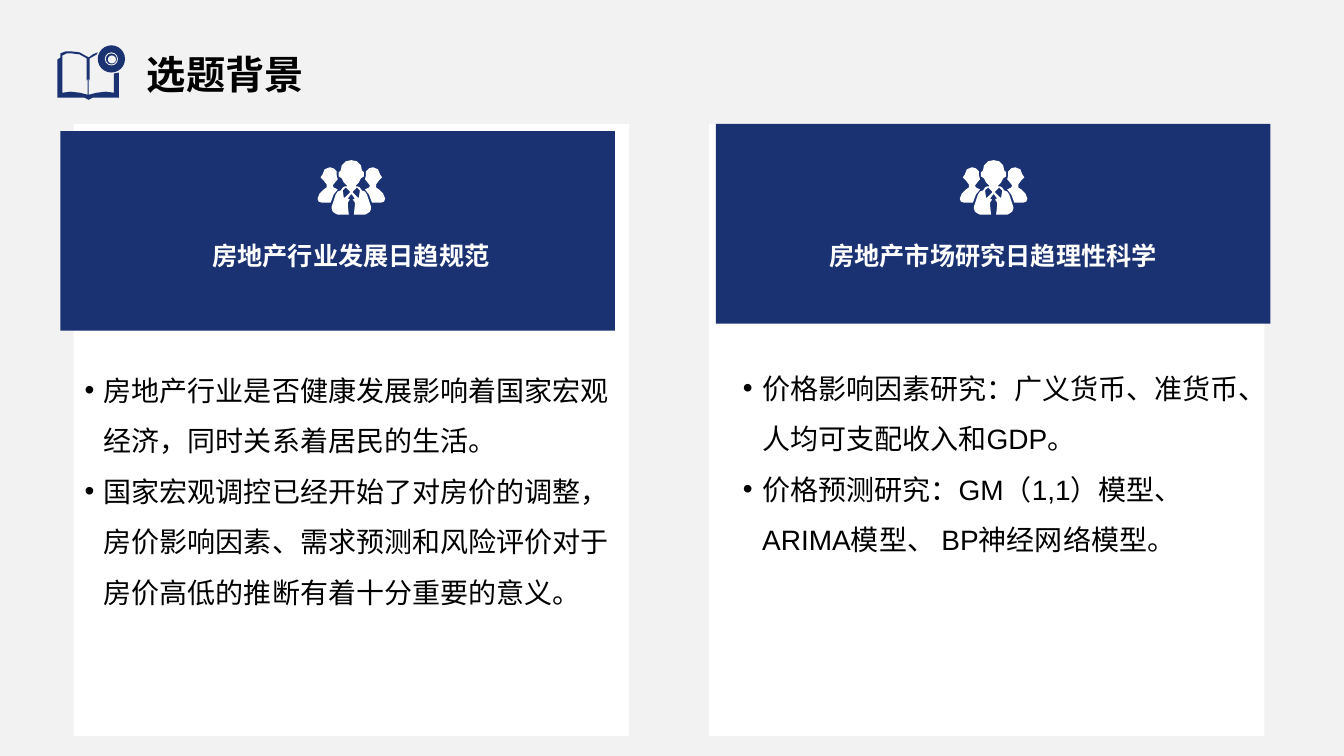
"""Build the research background slide with two topic cards."""
import lxml.etree
import pptx
import pptx.dml.color
import pptx.enum.shapes
import pptx.enum.text
import pptx.oxml.ns
import pptx.util

Inches = pptx.util.Inches
NAVY, WHITE, BLACK, GREY = "1A3172", "FFFFFF", "000000", "F2F2F2"
UNIT = Inches(0.01)
SHAPES = pptx.enum.shapes.MSO_SHAPE
ANCHOR = pptx.enum.text.MSO_ANCHOR


def paint(shape, color):
    shape.shadow.inherit = False
    shape.fill.solid()
    shape.fill.fore_color.rgb = pptx.dml.color.RGBColor.from_string(color)
    shape.line.fill.background()


def add_text(place, lines, size, color, bold=False, anchor=ANCHOR.TOP):
    box = slide.shapes.add_textbox(*[Inches(value) for value in place])
    frame = box.text_frame
    frame.text = "\n".join(lines)
    frame.word_wrap = True
    frame.vertical_anchor = anchor
    for para in frame.paragraphs:
        font = para.runs[0].font
        font.name, font.size, font.bold = "Arial", pptx.util.Pt(size), bold
        font.color.rgb = pptx.dml.color.RGBColor.from_string(color)
    return frame


deck = pptx.Presentation()
deck.slide_width, deck.slide_height = Inches(13.33), Inches(7.5)
slide = deck.slides.add_slide(deck.slide_layouts[6])
slide.background.fill.solid()
slide.background.fill.fore_color.rgb = pptx.dml.color.RGBColor.from_string(GREY)

book = [
    [(14, 6), (22, 7), (31, 12), (35, 9), (40, 7), (39, 9), (32, 13), (32, 35),
     (31, 33), (31, 49), (39, 47), (48, 46), (56, 47), (56, 28), (61, 27), (61, 52),
     (35, 52), (31, 54), (27, 52), (0, 52), (0, 14), (3, 12), (3, 8), (8, 6)],
    [(14, 8), (9, 8), (5, 10), (5, 47), (13, 46), (22, 47), (30, 49), (30, 33),
     (29, 35), (29, 13), (22, 9)],
]
colleague = [
    (55, 7), (60, 9), (62, 14), (64, 17), (61, 20), (58, 24), (58, 27), (61, 29),
    (65, 33), (67, 38), (66, 41), (63, 42), (54, 42), (51, 34), (47, 29), (51, 27),
    (52, 25), (48, 20), (47, 19), (48, 15), (48, 11), (51, 8)]
collar = [(39, 27), (35, 31), (35, 32), (40, 37), (41, 37), (42, 30), (41, 29)]
leader_half = [
    (34, 0), (39, 1), (43, 5), (44, 10), (46, 12), (46, 16), (43, 18), (41, 22),
    (38, 25), (38, 26), (40, 26), (42, 27), (44, 30), (47, 31), (49, 34), (53, 46),
    (53, 48), (52, 51), (49, 53), (47, 54), (36, 54), (37, 45), (37, 42), (35, 39),
    (37, 38), (34, 34)]
colleague_left, collar_left, leader_left = [
    [(67 - x, y) for x, y in outline] for outline in (colleague, collar, leader_half)]
people = [leader_half + leader_left[::-1], colleague, colleague_left, collar, collar_left]

cards = [
    (0.73, 0.6, 1.3, 1.48, 3.15, "房地产行业发展日趋规范", (0.74, 3.49, 5.49, 2.6),
     ["房地产行业是否健康发展影响着国家宏观经济，同时关系着居民的生活。",
      "国家宏观调控已经开始了对房价的调整，房价影响因素、需求预测和风险评价对于房价高低的推断有着十分重要的意义。"]),
    (7.03, 7.1, 1.23, 7.85, 9.52, "房地产市场研究日趋理性科学", (7.27, 3.47, 5.15, 2.06),
     ["价格影响因素研究：广义货币、准货币、人均可支配收入和GDP。",
      "价格预测研究：GM（1,1）模型、ARIMA模型、 BP神经网络模型。"]),
]
icons = [(0.57, 0.45, book, NAVY)]
for card_left, banner_left, banner_top, heading_left, icon_left, heading, body_place, points in cards:
    for left, top, width, height, color in [
            (card_left, 1.23, 5.51, 6.07, WHITE), (banner_left, banner_top, 5.5, 1.98, NAVY)]:
        panel = slide.shapes.add_shape(
            SHAPES.RECTANGLE, Inches(left), Inches(top), Inches(width), Inches(height))
        paint(panel, color)
    title = add_text((heading_left, 2.21, 4, 0.64), [heading], 18, WHITE, True, ANCHOR.MIDDLE)
    title.paragraphs[0].alignment = pptx.enum.text.PP_ALIGN.CENTER
    body = add_text(body_place, points, 20, BLACK)
    for para in body.paragraphs:
        para.line_spacing = 1.5
        properties = para._p.get_or_add_pPr()
        properties.set("marL", str(Inches(0.19)))
        properties.set("indent", str(-Inches(0.19)))
        for tag, name, value in [("a:buFont", "typeface", "Arial"), ("a:buChar", "char", "•")]:
            lxml.etree.SubElement(properties, pptx.oxml.ns.qn(tag)).set(name, value)
    icons.append((icon_left, 1.59, people, WHITE))

for left, top, outlines, color in icons:
    builder = slide.shapes.build_freeform(*outlines[0][0], scale=UNIT)
    builder.add_line_segments(outlines[0][1:], close=True)
    for outline in outlines[1:]:
        builder.move_to(*outline[0])
        builder.add_line_segments(outline[1:], close=True)
    paint(builder.convert_to_shape(Inches(left), Inches(top)), color)

for left, top, size, color in [
        (0.97, 0.45, 0.27, NAVY), (1.04, 0.52, 0.13, GREY),
        (1.05, 0.53, 0.11, NAVY), (1.07, 0.55, 0.08, GREY)]:
    disc = slide.shapes.add_shape(
        SHAPES.OVAL, Inches(left), Inches(top), Inches(size), Inches(size))
    paint(disc, color)

page_title = add_text((1.36, 0.29, 2.06, 0.73), ["选题背景"], 28, BLACK, True, ANCHOR.BOTTOM)
page_title.paragraphs[0].line_spacing = 0.9

deck.save("out.pptx")
